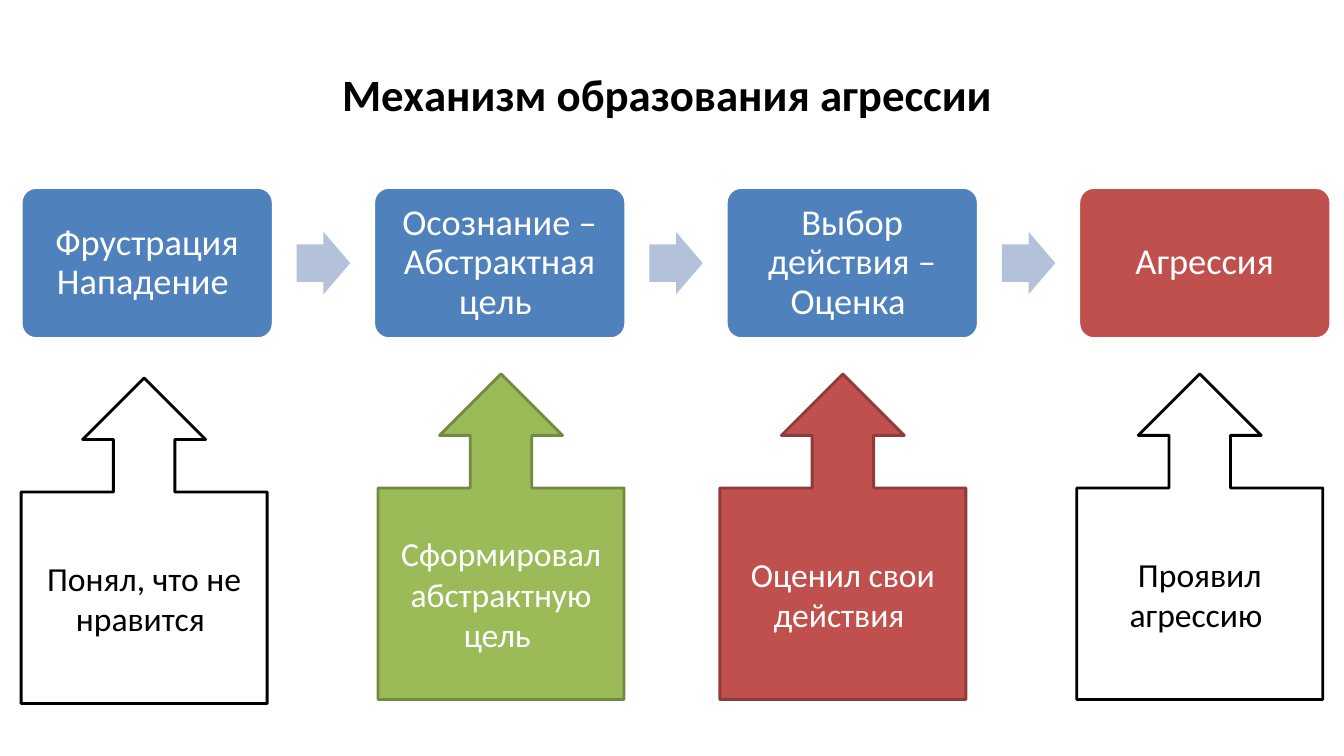
from collections import namedtuple
from dataclasses import dataclass

from pptx import Presentation
from pptx import util as u
from pptx.dml.color import RGBColor
from pptx.enum import shapes, text

Box = namedtuple("Box", "left top width height")


@dataclass(frozen=True)
class Theme:
    font: str = "Calibri"
    white: str = "FFFFFF"
    black: str = "000000"
    blue: str = "4F81BD"
    pale_blue: str = "B3C1DB"
    red: str = "C0504D"
    dark_red: str = "8E3B39"
    green: str = "9BBB59"
    dark_green: str = "738A42"
    title_size: int = 32
    stage_size: int = 26
    callout_size: int = 24
    line_width: int = 2


THEME = Theme()
SLIDE_WIDTH, SLIDE_HEIGHT = 13.33, 7.5
TITLE_BOX = Box(0.67, 0.3, 12, 1.25)
STAGES_BOX = Box(0.21, 1.86, 12.99, 1.5)
CALLOUT_WIDTH, CALLOUT_HEIGHT = 2.44, 3.23

# Wording and fill of each stage
STAGES = [
    ("Фрустрация Нападение ", THEME.blue),
    ("Осознание – Абстрактная цель ", THEME.blue),
    ("Выбор действия – Оценка ", THEME.blue),
    ("Агрессия", THEME.red),
]
# Left, top, wording, fill, line and text colour of each callout
CALLOUTS = [
    (0.21, 3.75, "Понял, что не нравится ", THEME.white, THEME.black, THEME.black),
    (3.75, 3.71, "Сформировал абстрактную цель ", THEME.green, THEME.dark_green, THEME.white),
    (7.14, 3.71, "Оценил свои действия ", THEME.red, THEME.dark_red, THEME.white),
    (10.68, 3.71, "Проявил агрессию ", THEME.white, THEME.black, THEME.black),
]


def inches(box):
    return [u.Inches(length) for length in box]


def write_text(shape, wording, *, size, color, bold=False, spacing=1.0,
               inset_x=0.1, inset_y=0.05):
    frame = shape.text_frame
    frame.word_wrap = True
    frame.vertical_anchor = text.MSO_ANCHOR.MIDDLE
    frame.margin_left = frame.margin_right = u.Inches(inset_x)
    frame.margin_top = frame.margin_bottom = u.Inches(inset_y)
    paragraph = frame.paragraphs[0]
    paragraph.alignment = text.PP_ALIGN.CENTER
    paragraph.line_spacing = spacing
    run = paragraph.add_run()
    run.text = wording
    run.font.name = THEME.font
    run.font.size = u.Pt(size)
    run.font.bold = bold
    run.font.color.rgb = RGBColor.from_string(color)


def add_figure(slide, kind, box, fill, line=None):
    shape = slide.shapes.add_shape(kind, *inches(box))
    shape.shadow.inherit = False
    shape.fill.solid()
    shape.fill.fore_color.rgb = RGBColor.from_string(fill)
    if line:
        shape.line.color.rgb = RGBColor.from_string(line)
        shape.line.width = u.Pt(THEME.line_width)
    else:
        shape.line.fill.background()
    return shape


def add_title(slide, box):
    title = slide.shapes.add_textbox(*inches(box))
    write_text(title, "Механизм образования агрессии ",
               size=THEME.title_size, color=THEME.black, bold=True)


def add_stages(slide, box):
    """Place equal stages across the box, with an arrow in each gap."""
    stage_width, arrow_width, arrow_height = 2.5, 0.53, 0.62
    pitch = (box.width - stage_width) / (len(STAGES) - 1)
    arrow_top = box.top + (box.height - arrow_height) / 2
    for column, (wording, fill) in enumerate(STAGES):
        left = box.left + column * pitch
        stage = add_figure(slide, shapes.MSO_SHAPE.ROUNDED_RECTANGLE,
                           Box(left, box.top, stage_width, box.height),
                           fill, THEME.white)
        stage.adjustments[0] = 0.1
        write_text(stage, wording, size=THEME.stage_size, color=THEME.white,
                   spacing=0.9, inset_x=0.11, inset_y=0.11)
        if column < len(STAGES) - 1:
            arrow_left = left + (stage_width + pitch - arrow_width) / 2
            arrow = add_figure(slide, shapes.MSO_SHAPE.RIGHT_ARROW,
                               Box(arrow_left, arrow_top, arrow_width, arrow_height),
                               THEME.pale_blue)
            arrow.adjustments[0] = 0.6


def add_callout(slide, box, wording, fill, line, color):
    callout = add_figure(slide, shapes.MSO_SHAPE.UP_ARROW_CALLOUT, box, fill, line)
    write_text(callout, wording, size=THEME.callout_size, color=color)


def main():
    presentation = Presentation()
    presentation.slide_width = u.Inches(SLIDE_WIDTH)
    presentation.slide_height = u.Inches(SLIDE_HEIGHT)
    slide = presentation.slides.add_slide(presentation.slide_layouts[6])
    add_title(slide, TITLE_BOX)
    add_stages(slide, STAGES_BOX)
    for left, top, *content in CALLOUTS:
        add_callout(slide, Box(left, top, CALLOUT_WIDTH, CALLOUT_HEIGHT), *content)
    presentation.save("out.pptx")


if __name__ == "__main__":
    main()
